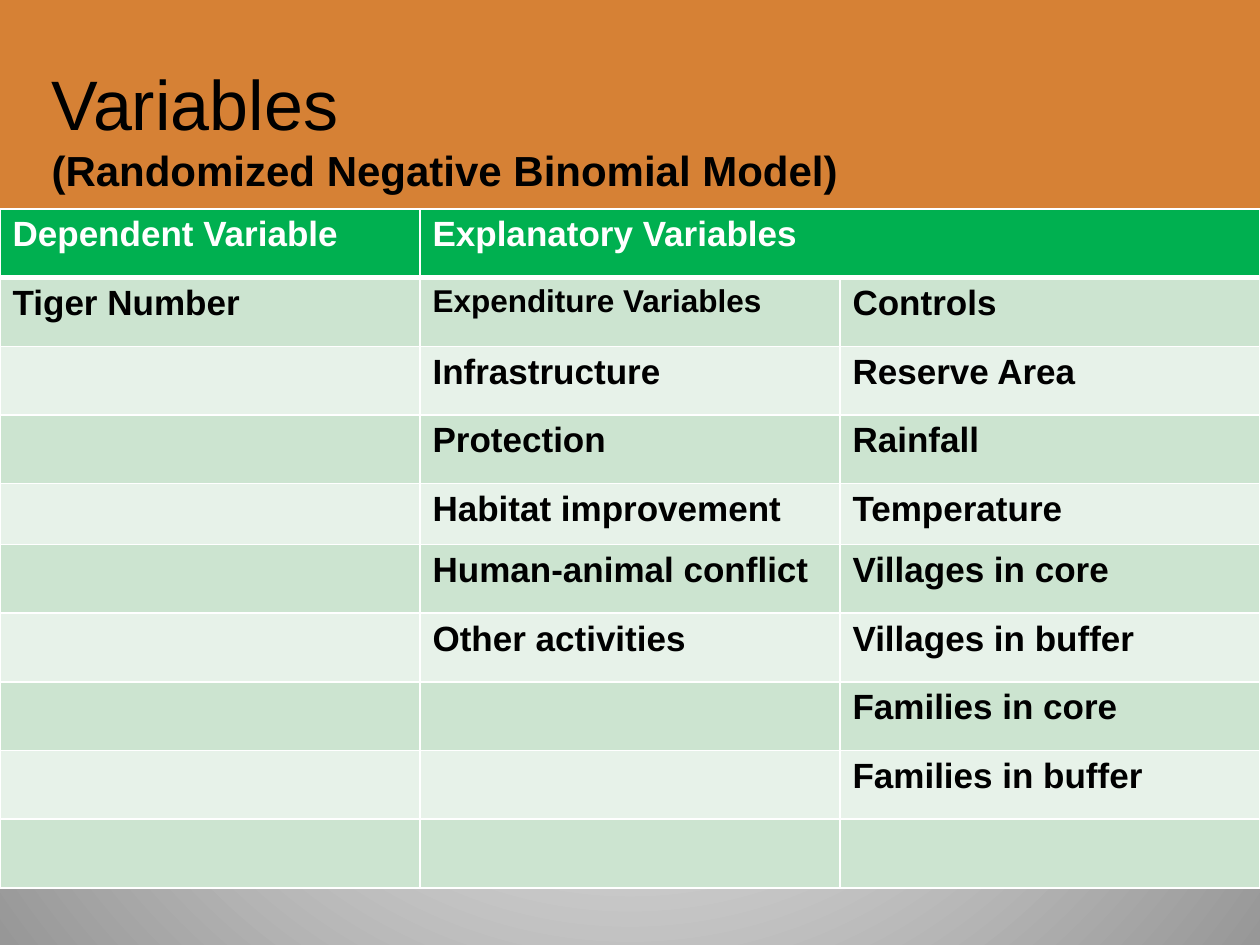
import pptx
import pptx.dml.color
import pptx.enum.shapes
import pptx.enum.text
import pptx.oxml
import pptx.oxml.ns
import pptx.util
from lxml import etree

# Content
TITLE = [("Variables", 40, False), ("(Randomized Negative Binomial Model)", 24, True)]
ROWS = [
    ("Dependent Variable", "Explanatory Variables", ""),
    ("Tiger Number", "Expenditure Variables", "Controls"),
    ("", "Infrastructure", "Reserve Area"),
    ("", "Protection", "Rainfall"),
    ("", "Habitat improvement", "Temperature"),
    ("", "Human-animal conflict", "Villages in core"),
    ("", "Other activities", "Villages in buffer"),
    ("", "", "Families in core"),
    ("", "", "Families in buffer"),
    ("", "", ""),
]
SMALL_TEXT = "Expenditure Variables"
COLORS = {
    "banner": "D68135", "header": "00B050", "odd": "CCE4D0", "even": "E7F2E9",
    "white": "FFFFFF", "black": "000000", "gray": "979797",
}

# Layout in px
PX = 914400 // 126
SLIDE = (1260, 945)
BANNERS = [(0, 0, 1260, 215), (944, 0, 316, 215)]
TITLE_BOX = (39, 49, 907, 158)
TABLE_BOX = (0, 209, 1260, 679)
SHORT_ROW, SHORT_HEIGHT = 4, 61


def px(*lengths):
    return [round(length * PX) for length in lengths]


def rgb(name):
    return pptx.dml.color.RGBColor.from_string(COLORS[name])


def write(para, text, size=20, bold=True, color="black"):
    span = para.add_run()
    span.text = text
    span.font.name = "Arial"
    span.font.size = pptx.util.Pt(size)
    span.font.bold = bold
    span.font.color.rgb = rgb(color)


def set_borders(cell, bottom):
    properties = cell._tc.get_or_add_tcPr()
    for index, side in enumerate("LRTB"):
        width = pptx.util.Pt(bottom if side == "B" else 1)
        properties.insert(index, pptx.oxml.parse_xml(
            f'<a:ln{side} {pptx.oxml.ns.nsdecls("a")} w="{width}"><a:solidFill>'
            f'<a:srgbClr val="{COLORS["white"]}"/></a:solidFill></a:ln{side}>'))


def paint_background(page):
    fill = page.background.fill
    fill.gradient()
    for stop, name, position in zip(fill.gradient_stops, ("white", "gray"), (0, 1)):
        stop.color.rgb = rgb(name)
        stop.position = position
    gradient = next(page._element.iter(pptx.oxml.ns.qn("a:gradFill")))
    gradient.remove(gradient.find(pptx.oxml.ns.qn("a:lin")))
    circle = etree.SubElement(gradient, pptx.oxml.ns.qn("a:path"), path="circle")
    etree.SubElement(circle, pptx.oxml.ns.qn("a:fillToRect"),
                     {side: "50000" for side in "ltrb"})


def add_banners(page):
    for place in BANNERS:
        banner = page.shapes.add_shape(
            pptx.enum.shapes.MSO_SHAPE.RECTANGLE, *px(*place))
        banner.shadow.inherit = False
        banner.fill.solid()
        banner.fill.fore_color.rgb = rgb("banner")
        banner.line.fill.background()


def add_title(page):
    title = page.shapes.title
    title.left, title.top, title.width, title.height = px(*TITLE_BOX)
    page.shapes._spTree.append(title._element)  # in front of the banners
    title.text_frame.word_wrap = True
    title.text_frame.vertical_anchor = pptx.enum.text.MSO_ANCHOR.MIDDLE
    para = title.text_frame.paragraphs[0]
    para.alignment = pptx.enum.text.PP_ALIGN.LEFT
    for index, (text, size, bold) in enumerate(TITLE):
        if index:
            para.add_line_break()
        write(para, text, size=size, bold=bold)


def add_variables_table(page):
    table = page.shapes.add_table(len(ROWS), len(ROWS[0]), *px(*TABLE_BOX)).table
    for column in table.columns:
        column.width = px(TABLE_BOX[2] / len(ROWS[0]))[0]
    tall = (TABLE_BOX[3] - SHORT_HEIGHT) / (len(ROWS) - 1)
    for i, texts in enumerate(ROWS):
        table.rows[i].height = px(SHORT_HEIGHT if i == SHORT_ROW else tall)[0]
        fill = "header" if i == 0 else ("even", "odd")[i % 2]
        for j, text in enumerate(texts):
            cell = table.cell(i, j)
            cell.fill.solid()
            cell.fill.fore_color.rgb = rgb(fill)
            set_borders(cell, bottom=1 if i else 3)
            if text:
                write(cell.text_frame.paragraphs[0], text,
                      size=18 if text == SMALL_TEXT else 20,
                      color="black" if i else "white")
    table.cell(0, 1).merge(table.cell(0, 2))


def main():
    deck = pptx.Presentation()
    deck.slide_width, deck.slide_height = px(*SLIDE)
    page = deck.slides.add_slide(deck.slide_layouts.get_by_name("Title Only"))
    paint_background(page)
    add_banners(page)
    add_title(page)
    add_variables_table(page)
    deck.save("out.pptx")


if __name__ == "__main__":
    main()
